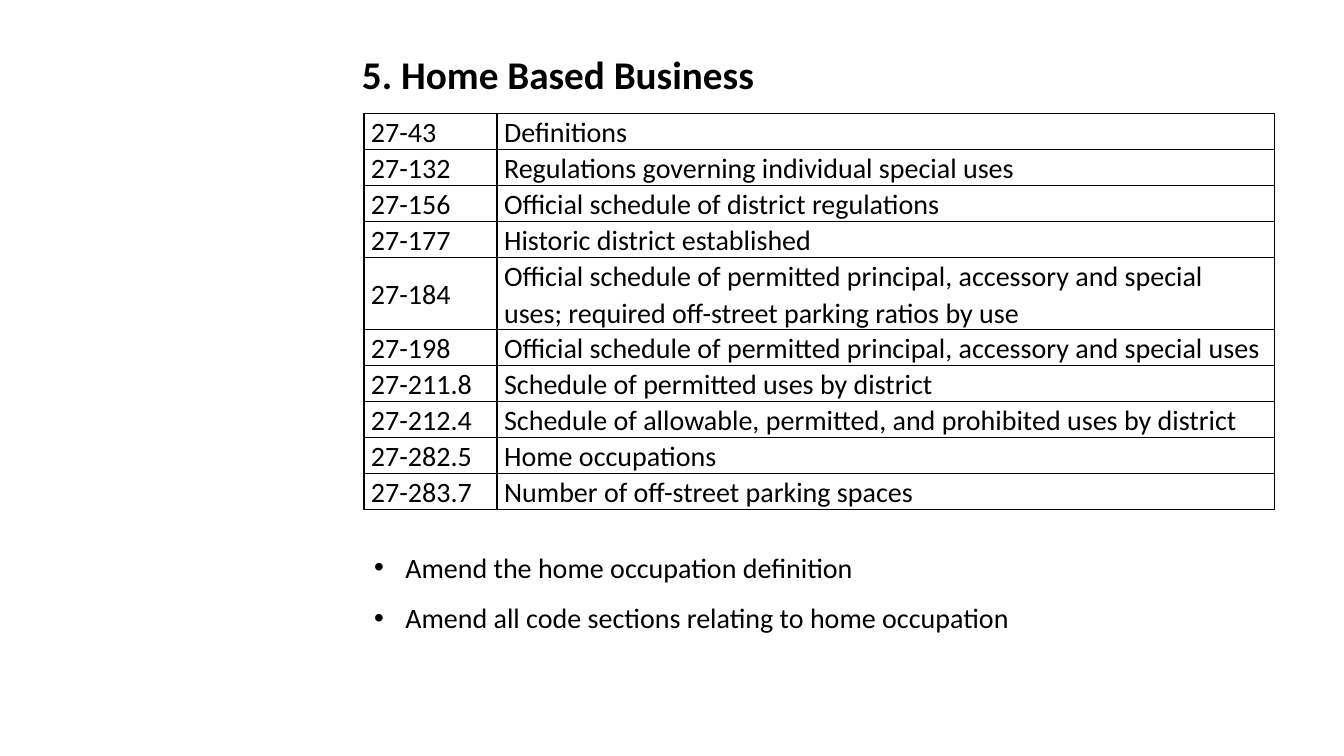
import pptx
import pptx.util
import pptx.dml.color
import pptx.enum.text
import pptx.oxml
import pptx.oxml.ns
from pptx.util import Inches

COLORS = {"ink": "000000"}
FONT = "Calibri"

code_sections = [
    ("27-43", "Definitions"),
    ("27-132", "Regulations governing individual special uses"),
    ("27-156", "Official schedule of district regulations"),
    ("27-177", "Historic district established"),
    ("27-184", "Official schedule of permitted principal, accessory and special uses; "
               "required off-street parking ratios by use"),
    ("27-198", "Official schedule of permitted principal, accessory and special uses"),
    ("27-211.8", "Schedule of permitted uses by district"),
    ("27-212.4", "Schedule of allowable, permitted, and prohibited uses by district"),
    ("27-282.5", "Home occupations"),
    ("27-283.7", "Number of off-street parking spaces"),
]
amendments = [
    "Amend the home occupation definition",
    "Amend all code sections relating to home occupation",
]


def add_text(paragraph, text, size, bold=False):
    run = paragraph.add_run()
    run.text = text
    run.font.name = FONT
    run.font.size = pptx.util.Pt(size)
    run.font.bold = bold
    run.font.color.rgb = pptx.dml.color.RGBColor.from_string(COLORS["ink"])


def add_borders(cell):
    properties = cell._tc.get_or_add_tcPr()
    for side in ("L", "R", "T", "B"):
        properties.append(pptx.oxml.parse_xml(
            f'<a:ln{side} {pptx.oxml.ns.nsdecls("a")} w="12700"><a:solidFill>'
            f'<a:srgbClr val="{COLORS["ink"]}"/></a:solidFill></a:ln{side}>'))


deck = pptx.Presentation()
deck.slide_width = Inches(13.33)
deck.slide_height = Inches(7.5)
slide = deck.slides.add_slide(deck.slide_layouts[1])

heading = slide.shapes.title
heading.left, heading.top = Inches(3.49), Inches(0.4)
heading.width, heading.height = Inches(8.92), Inches(0.73)
heading.text_frame.vertical_anchor = pptx.enum.text.MSO_ANCHOR.MIDDLE
heading_line = heading.text_frame.paragraphs[0]
heading_line.alignment = pptx.enum.text.PP_ALIGN.LEFT
heading_line.line_spacing = 0.9
add_text(heading_line, "5. Home Based Business", 28, bold=True)

sections = slide.shapes.add_table(
    len(code_sections), 2, Inches(3.61), Inches(1.13), Inches(9.03), Inches(3.05)).table
sections.first_row = False
sections.horz_banding = False
for column, width in zip(sections.columns, (1.32, 7.71)):
    column.width = Inches(width)
for index, entry in enumerate(code_sections):
    sections.rows[index].height = Inches(0.35 if index == 0 else 0.3)
    for position, text in enumerate(entry):
        cell = sections.cell(index, position)
        cell.margin_left = cell.margin_right = Inches(0.07)
        cell.margin_top = cell.margin_bottom = 0
        cell.vertical_anchor = pptx.enum.text.MSO_ANCHOR.MIDDLE
        add_borders(cell)
        cell.fill.background()
        paragraph = cell.text_frame.paragraphs[0]
        paragraph.line_spacing = 1.07
        paragraph.space_after = pptx.util.Pt(6 * position)
        add_text(paragraph, text, 20)

proposals = slide.placeholders[1]
proposals.left, proposals.top = Inches(3.61), Inches(5.41)
proposals.width, proposals.height = Inches(9.03), Inches(0.94)
proposals.text_frame.auto_size = pptx.enum.text.MSO_AUTO_SIZE.SHAPE_TO_FIT_TEXT
for index, text in enumerate(amendments):
    frame = proposals.text_frame
    paragraph = frame.paragraphs[0] if index == 0 else frame.add_paragraph()
    properties = paragraph._p.get_or_add_pPr()
    properties.set("marL", str(Inches(0.31)))
    properties.set("indent", str(-Inches(0.31)))
    for bullet in ('buFont {} typeface="Arial"', 'buChar {} char="•"'):
        properties.append(pptx.oxml.parse_xml(
            f'<a:{bullet.format(pptx.oxml.ns.nsdecls("a"))}/>'))
    paragraph.space_before = pptx.util.Pt(0)
    paragraph.space_after = pptx.util.Pt(12)
    add_text(paragraph, text, 20)

deck.save("out.pptx")
